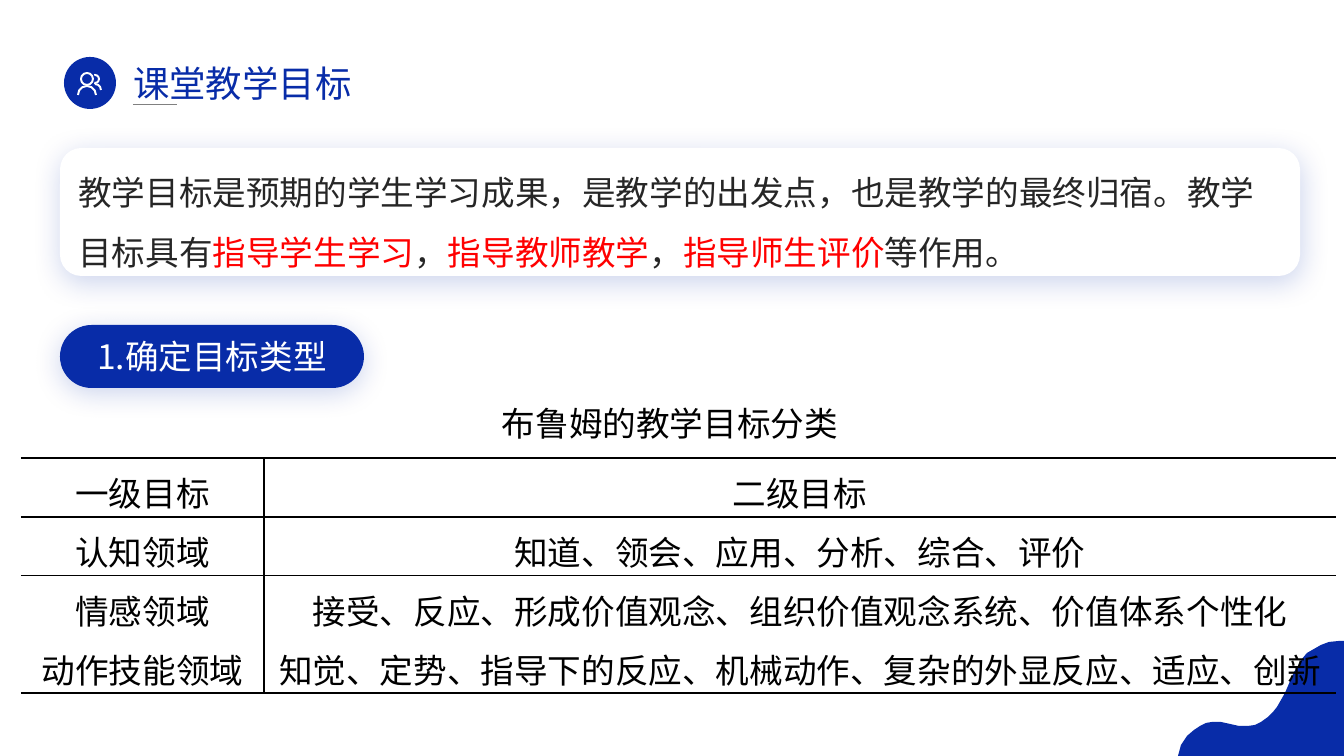
"""Build the slide on classroom teaching objectives with its goal taxonomy table."""
import pptx
import pptx.dml.color
import pptx.enum.shapes
import pptx.enum.text
import pptx.oxml
import pptx.oxml.ns
import pptx.util

PX = 9071
FONT = "Noto Sans CJK SC"
BLUE, WHITE, BLACK, DARK, RED = "082CA8", "FFFFFF", "000000", "262626", "FF0000"
NS = pptx.oxml.ns.nsdecls("a")
SHAPE = pptx.enum.shapes.MSO_SHAPE
ALIGN = pptx.enum.text.PP_ALIGN
ANCHOR = pptx.enum.text.MSO_ANCHOR


def color(value):
    return pptx.dml.color.RGBColor.from_string(value)


def write(paragraph, text, tint, align=ALIGN.LEFT, size=24):
    paragraph.add_run().text = text
    paragraph.alignment = align
    font = paragraph.font
    font.size = pptx.util.Pt(size)
    font.color.rgb = color(tint)
    font.name = FONT
    font._element.append(pptx.oxml.parse_xml(f'<a:ea {NS} typeface="{FONT}"/>'))


deck = pptx.Presentation()
deck.slide_width, deck.slide_height = 1344 * PX, 756 * PX
slide = deck.slides.add_slide(deck.slide_layouts[5])
shapes = slide.shapes

wave_points = [
    (1329, 642), (1321, 645), (1314, 649), (1307, 653), (1302, 659), (1298, 666),
    (1294, 672), (1291, 679), (1288, 686), (1285, 693), (1281, 700), (1277, 707),
    (1273, 712), (1268, 717), (1261, 722), (1255, 725), (1248, 726), (1239, 726),
    (1230, 724), (1221, 722), (1212, 722), (1206, 723), (1200, 726), (1194, 730),
    (1187, 736), (1181, 745), (1178, 756), (1344, 756), (1344, 641),
]
builder = shapes.build_freeform(1339, 641, scale=PX)
builder.add_line_segments(wave_points, close=True)
wave = builder.convert_to_shape()
badge = shapes.add_shape(SHAPE.OVAL, 64 * PX, 57 * PX, 52 * PX, 52 * PX)
for blue_part in (wave, badge):
    blue_part.shadow.inherit = False
    blue_part.fill.solid()
    blue_part.fill.fore_color.rgb = color(BLUE)
    blue_part.line.fill.background()

people_arcs = [
    (87, 79, 6, 0, 359.9),
    (87, 95, 9, 180, 359.9),
    (95, 79, 4, 260, 100),
    (95, 90, 6, 270, 359.9),
]
for center_x, center_y, radius, start, end in people_arcs:
    arc = shapes.add_shape(SHAPE.ARC, (center_x - radius) * PX, (center_y - radius) * PX,
                           2 * radius * PX, 2 * radius * PX)
    arc.adjustments[0], arc.adjustments[1] = start * 0.6, end * 0.6
    arc.shadow.inherit = False
    arc.fill.background()
    arc.line.color.rgb = color(WHITE)
    arc.line.width = pptx.util.Pt(1.4)

underline = shapes.add_connector(pptx.enum.shapes.MSO_CONNECTOR.STRAIGHT,
                                 133 * PX, 104 * PX, 177 * PX, 104 * PX)
underline.line.color.rgb = color("808080")
underline.line.width = pptx.util.Pt(0.5)
underline._element.spPr.append(pptx.oxml.parse_xml(f"<a:effectLst {NS}/>"))

heading = shapes.title
heading.left, heading.top, heading.width, heading.height = 123 * PX, 56 * PX, 241 * PX, 54 * PX
heading_frame = heading.text_frame
heading_frame.auto_size = pptx.enum.text.MSO_AUTO_SIZE.NONE
heading_frame.word_wrap = False
heading_frame.vertical_anchor = ANCHOR.MIDDLE
write(heading_frame.paragraphs[0], "课堂教学目标", BLUE, size=26)

purpose = [
    ("教学目标是预期的学生学习成果，是教学的出发点，也是教学的最终归宿。教学目标具有", DARK),
    ("指导学生学习", RED), ("，", DARK), ("指导教师教学", RED), ("，", DARK),
    ("指导师生评价", RED), ("等作用。", DARK),
]
panels = [
    ((60, 148, 1240, 128), 0.1667, WHITE, 12, ALIGN.LEFT, 1.5, purpose),
    ((60, 325, 304, 63), 0.5, BLUE, 20, ALIGN.CENTER, 1.0, [("1.确定目标类型", WHITE)]),
]
for box, rounding, fill, inset, align, spacing, pieces in panels:
    panel = shapes.add_shape(SHAPE.ROUNDED_RECTANGLE, *(n * PX for n in box))
    panel.adjustments[0] = rounding
    panel.fill.solid()
    panel.fill.fore_color.rgb = color(fill)
    panel.line.fill.background()
    panel._element.spPr.append(pptx.oxml.parse_xml(
        f'<a:effectLst {NS}><a:outerShdw blurRad="254000" dist="50800" dir="5400000" '
        f'algn="t" rotWithShape="0"><a:srgbClr val="{BLUE}"><a:alpha val="20000"/>'
        f'</a:srgbClr></a:outerShdw></a:effectLst>'))
    frame = panel.text_frame
    frame.word_wrap = True
    frame.vertical_anchor = ANCHOR.MIDDLE
    frame.margin_left = frame.margin_right = inset * PX
    frame.margin_top = frame.margin_bottom = 5 * PX
    paragraph = frame.paragraphs[0]
    write(paragraph, pieces[0][0], pieces[0][1], align)
    paragraph.line_spacing = spacing
    for text, tint in pieces[1:]:
        run = paragraph.add_run()
        run.text = text
        run.font.color.rgb = color(tint)

goals = [
    ("一级目标", "二级目标"),
    ("认知领域", "知道、领会、应用、分析、综合、评价"),
    ("情感领域", "接受、反应、形成价值观念、组织价值观念系统、价值体系个性化"),
    ("动作技能领域", "知觉、定势、指导下的反应、机械动作、复杂的外显反应、适应、创新"),
]
rules = [1.5, 1.5, 0.75, 0, 1.5]
taxonomy = shapes.add_table(4, 2, 21 * PX, 458 * PX, 1315 * PX, 200 * PX).table
taxonomy.first_row = taxonomy.horz_banding = False
taxonomy.columns[0].width, taxonomy.columns[1].width = 243 * PX, 1072 * PX
for row, levels in enumerate(goals):
    taxonomy.rows[row].height = 50 * PX
    for column, level in enumerate(levels):
        cell = taxonomy.cell(row, column)
        cell.margin_left = cell.margin_right = 7 * PX
        cell.margin_top, cell.margin_bottom = 10 * PX, 0
        edges = {"L": 1.5 * column, "R": 1.5 * (1 - column), "T": rules[row], "B": rules[row + 1]}
        for side, width in edges.items():
            stroke = f'<a:solidFill><a:srgbClr val="{BLACK}"/></a:solidFill>' if width else "<a:noFill/>"
            cell._tc.get_or_add_tcPr().append(pptx.oxml.parse_xml(
                f'<a:ln{side} {NS} w="{int(width * 12700)}">{stroke}</a:ln{side}>'))
        cell.fill.background()
        write(cell.text_frame.paragraphs[0], level, BLACK, ALIGN.CENTER)

caption = shapes.add_textbox(492 * PX, 398 * PX, 360 * PX, 50 * PX).text_frame
caption.word_wrap = False
caption.vertical_anchor = ANCHOR.MIDDLE
write(caption.paragraphs[0], "布鲁姆的教学目标分类", BLACK)

deck.save("out.pptx")
